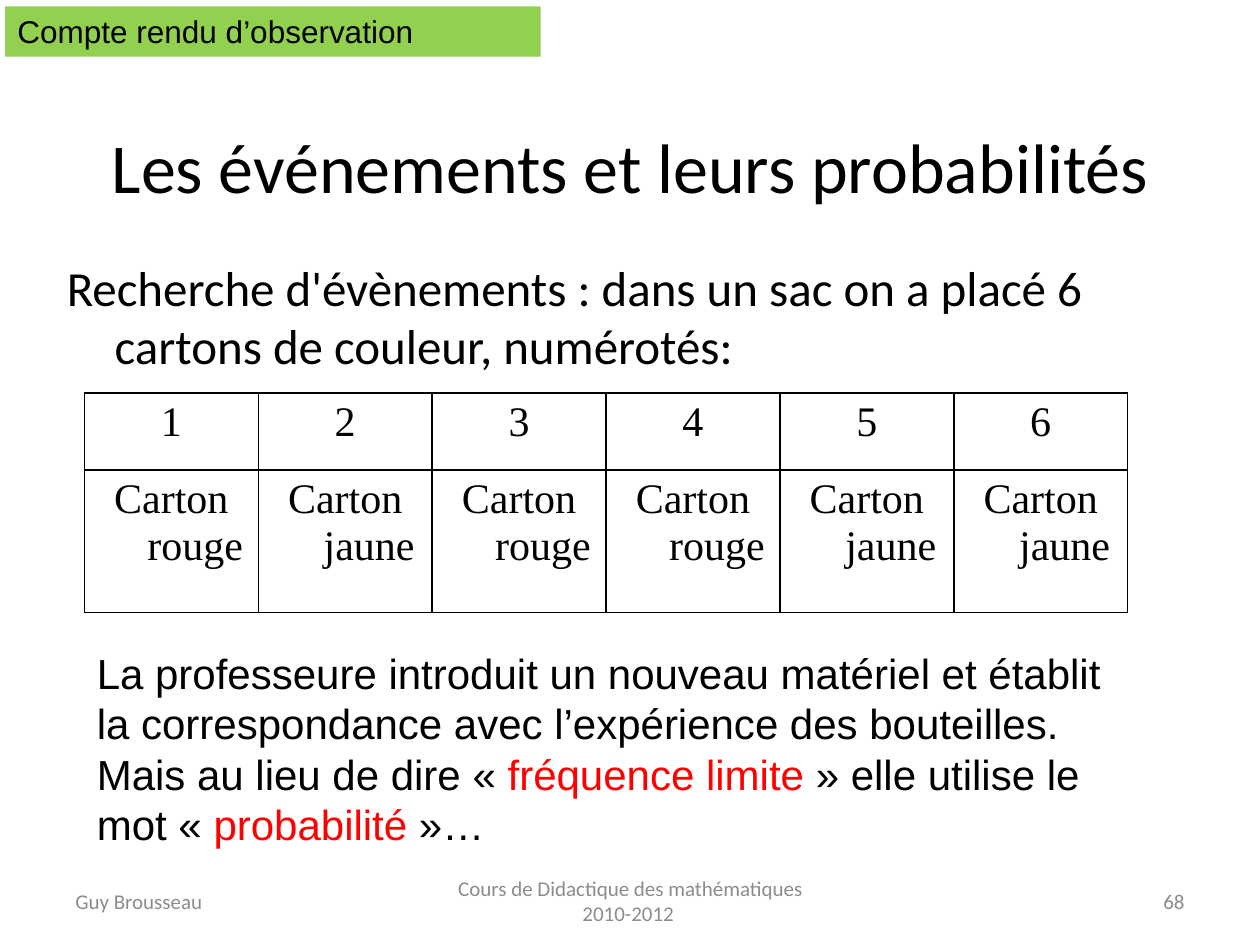
from lxml.etree import SubElement
from pptx import Presentation
from pptx.dml.color import RGBColor
from pptx.enum.shapes import MSO_SHAPE
from pptx.enum.text import MSO_ANCHOR, MSO_AUTO_SIZE, PP_ALIGN
from pptx.oxml.ns import qn
from pptx.util import Inches, Pt

BLACK, RED, GREY, GREEN = "000000", "FF0000", "8C8C8C", "92D050"
CARDS = ["rouge", "jaune", "rouge", "rouge", "jaune", "jaune"]


def color(value):
    """Turn a hex string into a colour."""
    return RGBColor.from_string(value)


def write(frame, *lines, font="Calibri", size=12, align=PP_ALIGN.LEFT,
          anchor=MSO_ANCHOR.TOP, hex_color=BLACK, hanging=0):
    """Fill a text frame with lines, each a string or a list of (text, colour)."""
    frame.word_wrap = True
    frame.vertical_anchor = anchor
    for index, line in enumerate(lines):
        para = frame.add_paragraph() if index else frame.paragraphs[0]
        para.alignment = align
        properties = para._p.get_or_add_pPr()
        properties.set("marL", str(Inches(hanging)))
        properties.set("indent", str(-Inches(hanging)))
        SubElement(properties, qn("a:buNone"))
        for text, shade in [(line, hex_color)] if isinstance(line, str) else line:
            span = para.add_run()
            span.text = text
            span.font.name = font
            span.font.size = Pt(size)
            span.font.color.rgb = color(shade)


def place(shape, left, top, width, height):
    """Move a shape to a box given in inches."""
    shape.left, shape.top = Inches(left), Inches(top)
    shape.width, shape.height = Inches(width), Inches(height)


def add_text(page, box, *lines, **style):
    """Add a text box."""
    frame = page.shapes.add_textbox(*map(Inches, box)).text_frame
    write(frame, *lines, **style)


def fill_placeholder(shape, box, text, **style):
    """Move a placeholder and write its text."""
    place(shape, *box)
    shape.text_frame.auto_size = MSO_AUTO_SIZE.NONE
    write(shape.text_frame, text, **style)


def add_banner(page, box, text):
    """Add the coloured label at the top of the page."""
    banner = page.shapes.add_shape(MSO_SHAPE.RECTANGLE, *map(Inches, box))
    banner.shadow.inherit = False
    banner.fill.solid()
    banner.fill.fore_color.rgb = color(GREEN)
    banner.line.fill.background()
    write(banner.text_frame, text, font="Arial", size=18)


def add_borders(cell):
    """Draw a thin black line on the four sides of a cell."""
    properties = cell._tc.get_or_add_tcPr()
    for position, side in enumerate(("a:lnL", "a:lnR", "a:lnT", "a:lnB")):
        line = properties.makeelement(qn(side), {"w": str(Pt(1))})
        fill = SubElement(line, qn("a:solidFill"))
        SubElement(fill, qn("a:srgbClr"), val=BLACK)
        properties.insert(position, line)


def add_cards_table(page, box, row_heights):
    """Add the table of numbered cards."""
    rows = [[str(number) for number in range(1, len(CARDS) + 1)],
            [f"Carton {card}" for card in CARDS]]
    table = page.shapes.add_table(len(rows), len(CARDS), *map(Inches, box)).table
    table.first_row = table.horz_banding = False
    for column in table.columns:
        column.width = Inches(box[2] / len(CARDS))
    for row, height, texts in zip(table.rows, row_heights, rows):
        row.height = Inches(height)
        for cell, text in zip(row.cells, texts):
            cell.fill.background()
            add_borders(cell)
            write(cell.text_frame, text, font="Times New Roman", size=24,
                  align=PP_ALIGN.CENTER, hanging=0.38)


def add_footer(page, top, height):
    """Add the author, course and page number."""
    parts = [(0.5, 2.33, "Guy Brousseau", PP_ALIGN.LEFT),
             (3.42, 3.17, "Cours de Didactique des mathématiques 2010-2012 ", PP_ALIGN.CENTER),
             (7.17, 2.33, "68", PP_ALIGN.RIGHT)]
    for left, width, text, align in parts:
        add_text(page, (left, top, width, height), text, align=align,
                 anchor=MSO_ANCHOR.MIDDLE, hex_color=GREY)


def build():
    """Build and save the deck."""
    deck = Presentation()
    deck.slide_width, deck.slide_height = Inches(10), Inches(7.5)
    page = deck.slides.add_slide(deck.slide_layouts[1])
    title, body = page.placeholders
    fill_placeholder(title, (0.5, 0.69, 9, 1.25), "Les événements et leurs probabilités",
                     size=40, align=PP_ALIGN.CENTER, anchor=MSO_ANCHOR.MIDDLE)
    fill_placeholder(body, (0.43, 1.99, 8.9, 1.21),
                     "Recherche d'évènements : dans un sac on a placé 6 "
                     "cartons de couleur, numérotés:", size=28, hanging=0.38)
    add_cards_table(page, (0.67, 3.12, 8.28, 1.74), (0.61, 1.13))
    add_footer(page, 6.95, 0.4)
    add_banner(page, (0.04, 0.05, 4.25, 0.4), "Compte rendu d’observation")
    add_text(page, (0.67, 5.09, 8.5, 1.72),
             "La professeure introduit un nouveau matériel et établit la "
             "correspondance avec l’expérience des bouteilles.",
             [("Mais au lieu de dire « ", BLACK), ("fréquence limite", RED),
              (" » elle utilise le mot « ", BLACK), ("probabilité ", RED), ("»…", BLACK)],
             font="Arial", size=24)
    deck.save("out.pptx")


if __name__ == "__main__":
    build()
